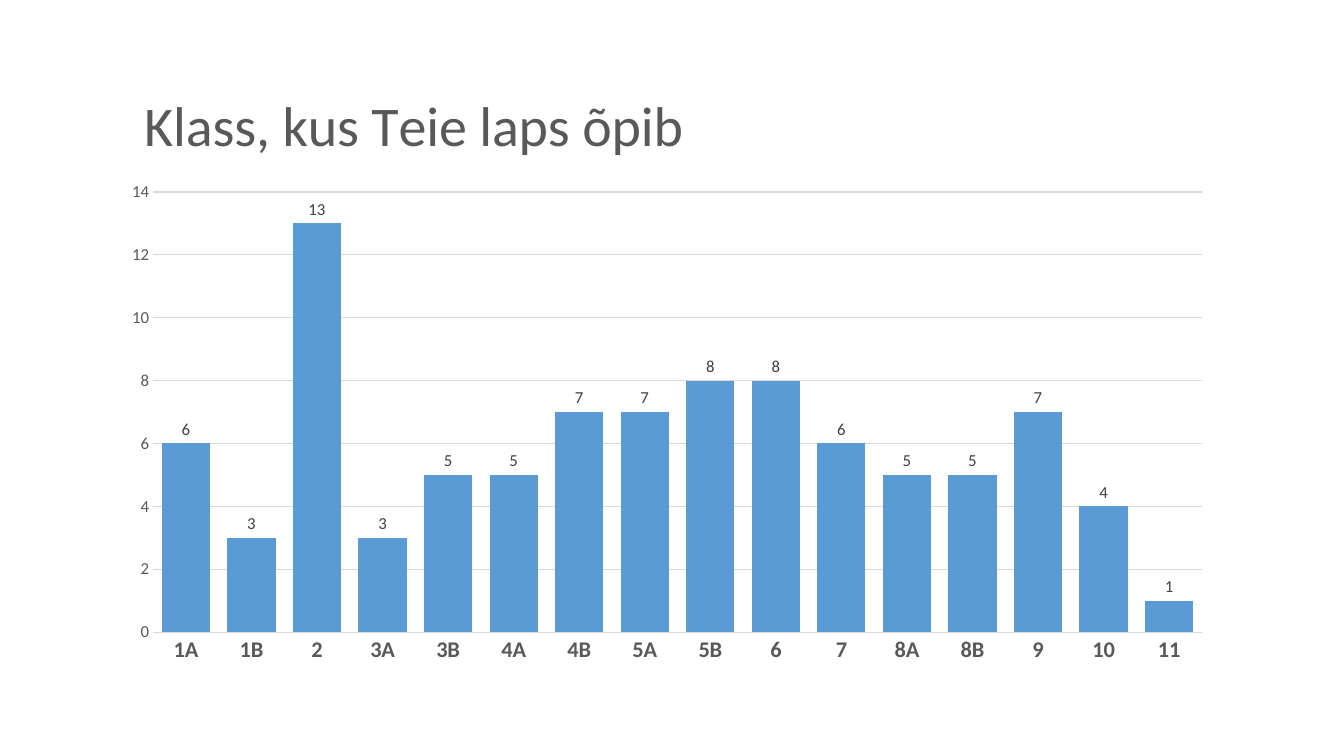
"""Build a slide with a column chart of pupils per class."""
from dataclasses import dataclass
from typing import Any

import lxml.etree
import pptx
import pptx.chart.data
import pptx.dml.color
import pptx.enum.chart
import pptx.oxml.ns
import pptx.util

Cm = pptx.util.Cm
COLORS = {"bar": "5B9BD5", "text": "595959", "grid": "D9D9D9", "value": "404040"}
CLASS_COUNTS = {
    "1A": 6, "1B": 3, "2": 13, "3A": 3, "3B": 5, "4A": 5, "4B": 7, "5A": 7,
    "5B": 8, "6": 8, "7": 6, "8A": 5, "8B": 5, "9": 7, "10": 4, "11": 1,
}


@dataclass(frozen=True)
class Box:
    left: float
    top: float
    width: float = 0
    height: float = 0


@dataclass(frozen=True)
class TextStyle:
    size: int
    color: str
    bold: bool = False


CHART_BOX = Box(2.77, 1.3, 28.09, 15.77)
PLOT_BOX = Box(3.86, 4.84, 26.43, 11.09)
TITLE_BOX = Box(3.38, 1.95)


def set_values(target: Any, values: dict[str, Any]) -> None:
    for name, value in values.items():
        setattr(target, name, value)


def style_font(font: Any, style: TextStyle) -> None:
    set_values(font, {"name": "Calibri", "size": pptx.util.Pt(style.size), "bold": style.bold})
    font.color.rgb = pptx.dml.color.RGBColor.from_string(COLORS[style.color])


def style_line(line: Any) -> None:
    line.color.rgb = pptx.dml.color.RGBColor.from_string(COLORS["grid"])
    line.width = pptx.util.Pt(0.75)


def place(parent: Any, index: int, box: Box) -> None:
    qn = pptx.oxml.ns.qn
    for old in parent.findall(qn("c:layout")):
        parent.remove(old)
    layout = lxml.etree.Element(qn("c:layout"))
    manual = lxml.etree.SubElement(layout, qn("c:manualLayout"))
    settings = {"xMode": "edge", "yMode": "edge"}
    if box.width:
        settings = {"layoutTarget": "inner"} | settings
    settings["x"] = str((box.left - CHART_BOX.left) / CHART_BOX.width)
    settings["y"] = str((box.top - CHART_BOX.top) / CHART_BOX.height)
    if box.width:
        settings["w"] = str(box.width / CHART_BOX.width)
        settings["h"] = str(box.height / CHART_BOX.height)
    for name, value in settings.items():
        lxml.etree.SubElement(manual, qn(f"c:{name}")).set("val", value)
    parent.insert(index, layout)


def add_class_chart(slide: Any) -> Any:
    pupils = pptx.chart.data.CategoryChartData()
    pupils.categories = list(CLASS_COUNTS)
    pupils.add_series("Series 1", list(CLASS_COUNTS.values()))
    return slide.shapes.add_chart(
        pptx.enum.chart.XL_CHART_TYPE.COLUMN_CLUSTERED,
        Cm(CHART_BOX.left), Cm(CHART_BOX.top), Cm(CHART_BOX.width), Cm(CHART_BOX.height),
        pupils,
    ).chart


def style_title(chart: Any) -> None:
    heading = chart.chart_title.text_frame.paragraphs[0].add_run()
    heading.text = "Klass, kus Teie laps õpib"
    style_font(heading.font, TextStyle(40, "text"))
    place(chart.chart_title._element, 1, TITLE_BOX)


def style_axes(chart: Any) -> None:
    no_tick = pptx.enum.chart.XL_TICK_MARK.NONE
    classes, counts = chart.category_axis, chart.value_axis
    for axis, style in ((classes, TextStyle(16, "text", True)), (counts, TextStyle(12, "text"))):
        set_values(axis, {"major_tick_mark": no_tick, "minor_tick_mark": no_tick})
        style_font(axis.tick_labels.font, style)
    style_line(classes.format.line)
    set_values(counts, {"minimum_scale": 0, "maximum_scale": 14, "major_unit": 2})
    counts.format.line.fill.background()
    style_line(counts.major_gridlines.format.line)


def style_columns(chart: Any) -> None:
    columns = chart.plots[0]
    set_values(columns, {"gap_width": 36, "overlap": 57, "vary_by_categories": False,
                         "has_data_labels": True})
    set_values(columns.data_labels, {
        "show_value": True,
        "position": pptx.enum.chart.XL_LABEL_POSITION.OUTSIDE_END,
    })
    style_font(columns.data_labels.font, TextStyle(12, "value"))
    fill = columns.series[0].format.fill
    fill.solid()
    fill.fore_color.rgb = pptx.dml.color.RGBColor.from_string(COLORS["bar"])
    place(chart._chartSpace.chart.plotArea, 0, PLOT_BOX)


def main() -> None:
    deck = pptx.Presentation()
    set_values(deck, {"slide_width": Cm(33.87), "slide_height": Cm(19.05)})
    slide = deck.slides.add_slide(deck.slide_layouts[6])
    chart = add_class_chart(slide)
    set_values(chart, {"has_legend": False, "has_title": True})
    style_font(chart.font, TextStyle(10, "text"))
    style_title(chart)
    style_axes(chart)
    style_columns(chart)
    deck.save("out.pptx")


if __name__ == "__main__":
    main()
